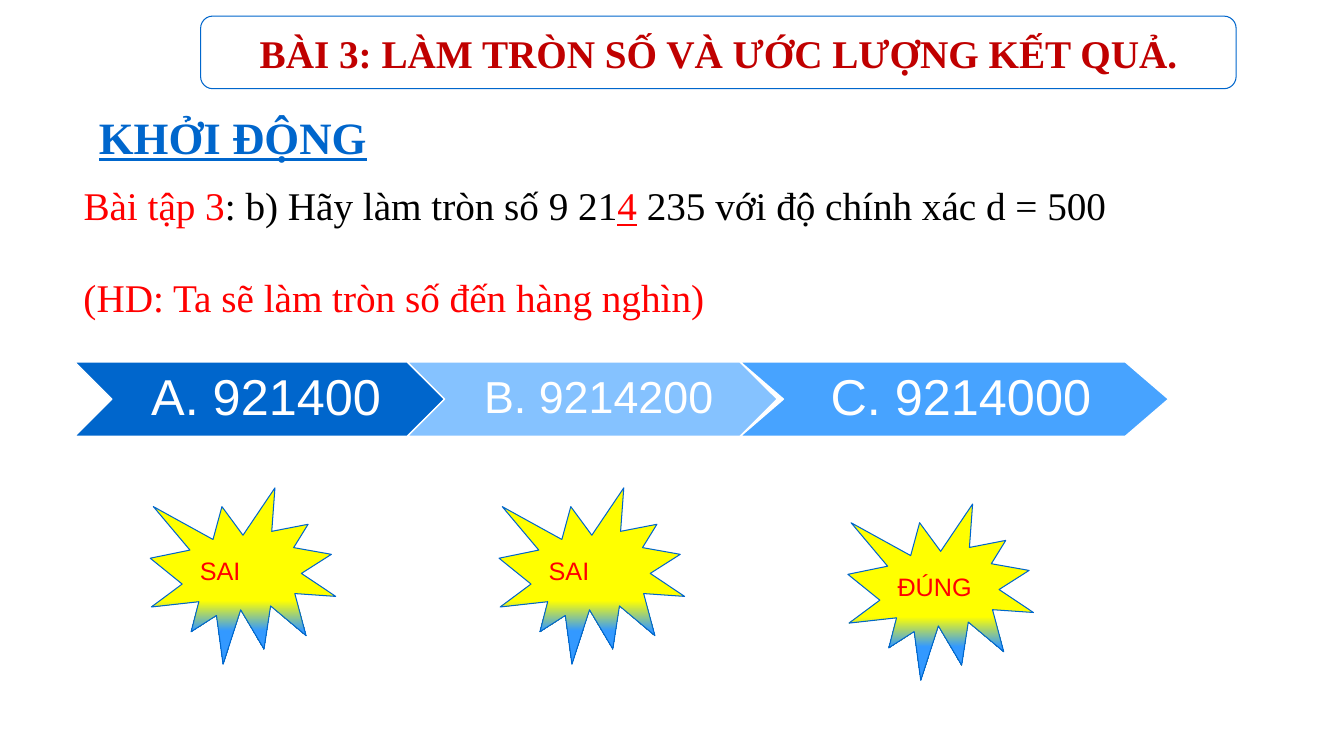
"""Build the rounding quiz slide with three answers and their verdicts."""
from lxml.etree import SubElement
from pptx import Presentation
from pptx.dml.color import RGBColor
from pptx.enum.shapes import MSO_SHAPE
from pptx.enum.text import MSO_ANCHOR, MSO_AUTO_SIZE, PP_ALIGN
from pptx.oxml.ns import qn
from pptx.util import Inches, Pt

SERIF, SANS = "Times New Roman", "Arial"
BLUE, RED, BLACK, WHITE = "0066CC", "FF0000", "000000", "FFFFFF"


def rgb(value):
    return RGBColor.from_string(value)


def write(frame, *runs, font=SERIF, size=28, bold=False, align=PP_ALIGN.LEFT,
          anchor=MSO_ANCHOR.TOP, wrap=True, spacing=1.0, insets=(0.1, 0.05, 0.1, 0.05)):
    frame.auto_size = MSO_AUTO_SIZE.NONE
    frame.word_wrap = wrap
    frame.vertical_anchor = anchor
    (frame.margin_left, frame.margin_top,
     frame.margin_right, frame.margin_bottom) = map(Inches, insets)
    paragraph = frame.paragraphs[0]
    paragraph.alignment = align
    paragraph.line_spacing = spacing
    paragraph.space_before = Pt(0)
    for text, color, underline in runs:
        run = paragraph.add_run()
        run.text = text
        run.font.name = font
        run.font.size = Pt(size)
        run.font.bold = bold
        run.font.underline = underline
        run.font.color.rgb = rgb(color)


class QuizSlide:
    def __init__(self, deck):
        self.slide = deck.slides.add_slide(deck.slide_layouts[1])
        self.shapes = self.slide.shapes

    def outline(self, shape, color, width):
        shape.shadow.inherit = False
        shape.line.color.rgb = rgb(color)
        shape.line.width = Pt(width)

    def place(self, placeholder, box):
        (placeholder.left, placeholder.top,
         placeholder.width, placeholder.height) = map(Inches, box)
        return placeholder.text_frame

    def banner(self, title, box):
        frame = self.shapes.add_shape(MSO_SHAPE.FLOWCHART_ALTERNATE_PROCESS, *map(Inches, box))
        frame.fill.background()
        self.outline(frame, BLUE, 0.75)
        write(self.place(self.shapes.title, box), (title, "C00000", False), bold=True,
              align=PP_ALIGN.CENTER, anchor=MSO_ANCHOR.MIDDLE)

    def heading(self, text, box):
        frame = self.place(self.slide.placeholders[1], box)
        properties = frame.paragraphs[0]._p.get_or_add_pPr()
        properties.set("marL", "0")
        properties.set("indent", "0")
        SubElement(properties, qn("a:buNone"))
        write(frame, (text, BLUE, True), size=32, bold=True)

    def statement(self, box, *runs):
        write(self.shapes.add_textbox(*map(Inches, box)).text_frame, *runs)

    def answer(self, text, left, width, tip, color, size):
        top, half = 3.59, 0.37
        right, middle, bottom = left + width, top + half, top + 2 * half
        corners = [(right - tip, top), (right, middle), (right - tip, bottom),
                   (left, bottom), (left + tip, middle)]
        builder = self.shapes.build_freeform(Inches(left), Inches(top))
        builder.add_line_segments([(Inches(x), Inches(y)) for x, y in corners])
        arrow = builder.convert_to_shape()
        arrow.fill.solid()
        arrow.fill.fore_color.rgb = rgb(color)
        self.outline(arrow, WHITE, 1)
        write(arrow.text_frame, (text, WHITE, False), font=SANS, size=size,
              align=PP_ALIGN.CENTER, anchor=MSO_ANCHOR.MIDDLE, spacing=0.9,
              insets=(0.56, 0.06, 0.43, 0.06))

    def verdict(self, text, left, top):
        burst = self.shapes.add_shape(MSO_SHAPE.EXPLOSION1, Inches(left), Inches(top),
                                      Inches(1.84), Inches(1.75))
        burst.fill.gradient()
        burst.fill.gradient_angle = 270
        for stop, position, color in zip(burst.fill.gradient_stops, (0.64, 0.81),
                                         ("FFFF00", "3399FF")):
            stop.position = position
            stop.color.rgb = rgb(color)
        self.outline(burst, BLUE, 0.75)
        write(burst.text_frame, (text, RED, False), font=SANS, size=18,
              anchor=MSO_ANCHOR.MIDDLE, wrap=False)


def main():
    deck = Presentation()
    deck.slide_width, deck.slide_height = Inches(13.33), Inches(7.5)
    quiz = QuizSlide(deck)
    quiz.heading("KHỞI ĐỘNG", (0.88, 1.04, 7.45, 0.71))
    quiz.statement((0.73, 1.75, 11.52, 0.74),
                   ("Bài tập 3", RED, False),
                   (": b) Hãy làm tròn số 9 21", BLACK, False),
                   ("4", RED, True),
                   (" 235 với độ chính xác d = 500", BLACK, False))
    quiz.banner("BÀI 3: LÀM TRÒN SỐ VÀ ƯỚC LƯỢNG KẾT QUẢ.", (1.99, 0.16, 10.27, 0.72))
    quiz.statement((0.73, 2.66, 10.27, 0.74),
                   ("(HD: Ta sẽ làm tròn số đến hàng nghìn)", RED, False))

    answers = [("A. 921400", 3.67, 0.37, BLUE, 36),
               ("B. 9214200", 3.67, 0.37, "85C2FF", 32),
               ("C. 9214000", 4.25, 0.43, "47A3FF", 36)]
    for column, (text, width, tip, color, size) in enumerate(answers):
        quiz.answer(text, 0.74 + 3.3 * column, width, tip, color, size)

    verdicts = [("SAI", 4.84), ("SAI", 4.84), ("ĐÚNG", 5)]
    for column, (text, top) in enumerate(verdicts):
        quiz.verdict(text, 1.49 + 3.46 * column, top)
    deck.save("out.pptx")


if __name__ == "__main__":
    main()
